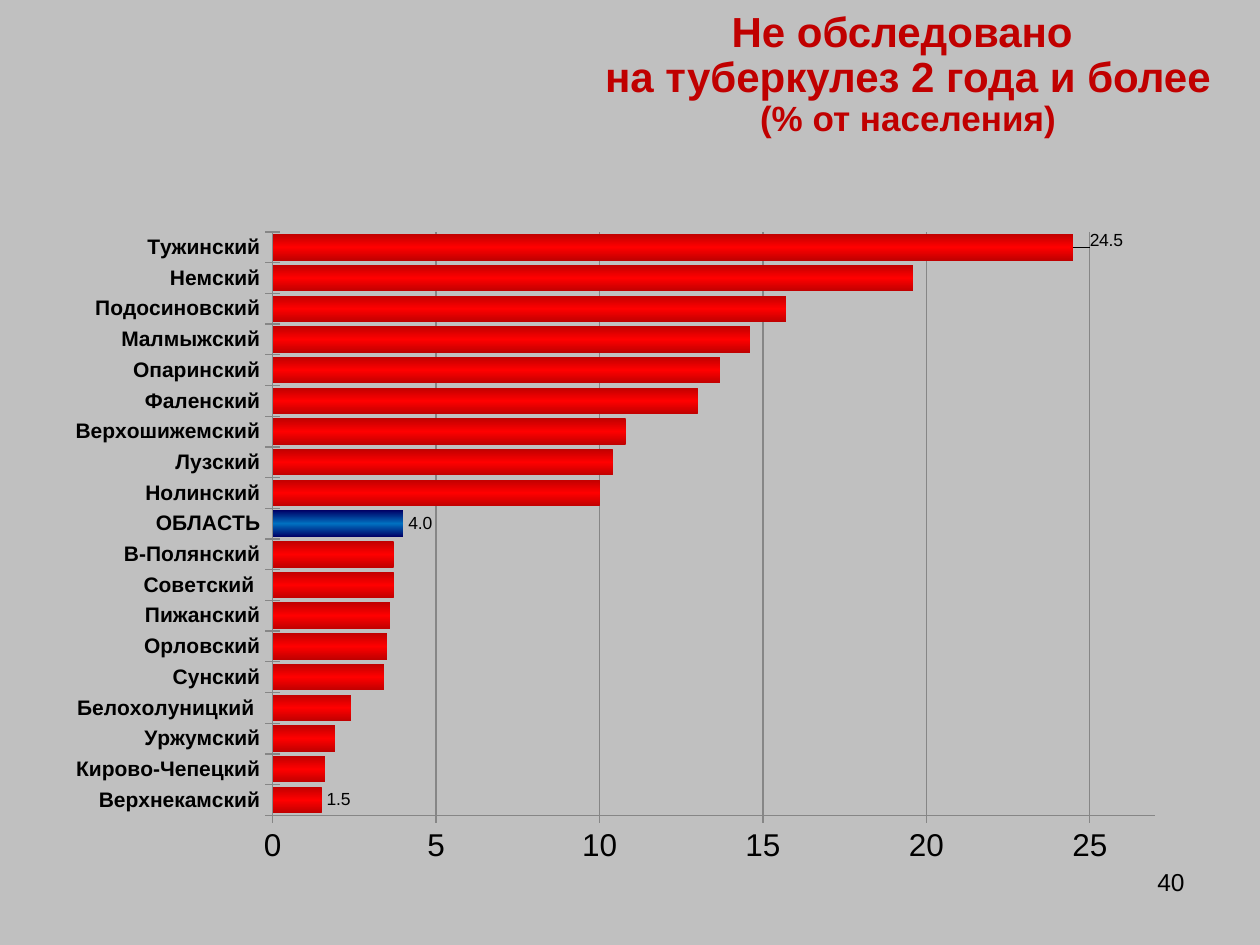
import pptx
import pptx.chart.data
import pptx.dml.color
import pptx.enum.chart
import pptx.enum.text
import pptx.oxml
import pptx.oxml.ns
import pptx.util

PX = 914400 / 126
FONT = "Arial"
RED = ("C00000", "FF0000", "C00000")
BLUE = ("000066", "0070C0", "000066")
GRID = "868686"
REGION = "ОБЛАСТЬ"
DISTRICTS = [
    ("Верхнекамский", 1.5), ("Кирово-Чепецкий", 1.6), ("Уржумский", 1.9),
    ("Белохолуницкий ", 2.4), ("Сунский", 3.4), ("Орловский", 3.5),
    ("Пижанский", 3.6), ("Советский ", 3.7), ("В-Полянский", 3.7),
    (REGION, 4.0), ("Нолинский", 10.0), ("Лузский", 10.4),
    ("Верхошижемский", 10.8), ("Фаленский", 13.0), ("Опаринский", 13.7),
    ("Малмыжский", 14.6), ("Подосиновский", 15.7), ("Немский", 19.6),
    ("Тужинский", 24.5),
]


def px(n):
    return pptx.util.Emu(round(n * PX))


def rgb(value):
    return pptx.dml.color.RGBColor.from_string(value)


def set_font(font, size, color="000000", bold=False):
    font.name = FONT
    font.size = pptx.util.Pt(size)
    font.bold = bold
    font.color.rgb = rgb(color)


def add_text(slide, box, lines, color="000000", bold=False, align="CENTER",
             anchor="TOP", spacing=1.0):
    """Add one paragraph whose (text, size) lines are parted by line breaks."""
    sp = slide.shapes.add_textbox(*map(px, box))
    tf = sp.text_frame
    tf.word_wrap = True
    tf.vertical_anchor = getattr(pptx.enum.text.MSO_ANCHOR, anchor)
    p = tf.paragraphs[0]
    p.alignment = getattr(pptx.enum.text.PP_ALIGN, align)
    p.line_spacing = spacing
    for i, (text, size) in enumerate(lines):
        if i:
            p.add_line_break()
        r = p.add_run()
        r.text = text
        set_font(r.font, size, color, bold)


def fill_gradient(fill, colors):
    fill.gradient()
    fill.gradient_angle = 90
    stops = fill._xPr.find(".//" + pptx.oxml.ns.qn("a:gsLst"))
    stops.clear()
    for i, color in enumerate(colors):
        stops.append(pptx.oxml.parse_xml(
            f'<a:gs {pptx.oxml.ns.nsdecls("a")} pos="{i * 50000}">'
            f'<a:srgbClr val="{color}"/></a:gs>'))


def set_layout(parent, index, **values):
    """Place a chart part by fractions of the chart's size."""
    old = parent.find(pptx.oxml.ns.qn("c:layout"))
    if old is not None:
        parent.remove(old)
    tags = "".join(f'<c:{k} val="{v}"/>' for k, v in values.items())
    parent.insert(index, pptx.oxml.parse_xml(
        f'<c:layout {pptx.oxml.ns.nsdecls("c")}><c:manualLayout>{tags}'
        '</c:manualLayout></c:layout>'))


def style_axis(axis, size, bold=False):
    axis.major_tick_mark = pptx.enum.chart.XL_TICK_MARK.CROSS
    axis.minor_tick_mark = pptx.enum.chart.XL_TICK_MARK.NONE
    axis.format.line.color.rgb = rgb(GRID)
    set_font(axis.tick_labels.font, size, bold=bold)


def label_point(series, index):
    label = series.points[index].data_label
    set_font(label.font, 10)
    label.position = pptx.enum.chart.XL_LABEL_POSITION.OUTSIDE_END


def add_bar_chart(slide, box):
    names, values = zip(*DISTRICTS)
    data = pptx.chart.data.CategoryChartData(number_format="0.0")
    data.categories = names
    data.add_series("Series 1", values)
    chart = slide.shapes.add_chart(
        pptx.enum.chart.XL_CHART_TYPE.BAR_CLUSTERED, *map(px, box), data).chart
    chart.has_legend = False
    chart.has_title = False
    set_font(chart.font, 18)
    set_layout(chart._chartSpace.chart.plotArea, 0, layoutTarget="inner",
               xMode="edge", yMode="edge", x=0.193, y=0.042, w=0.779, h=0.872)

    style_axis(chart.category_axis, 12, bold=True)
    axis = chart.value_axis
    style_axis(axis, 18)
    axis.minimum_scale, axis.maximum_scale, axis.major_unit = 0, 27, 5
    axis.tick_labels.number_format = "0"
    axis.tick_labels.number_format_is_linked = False
    axis.has_major_gridlines = True
    axis.major_gridlines.format.line.color.rgb = rgb(GRID)

    plot = chart.plots[0]
    plot.gap_width = 16
    plot.vary_by_categories = False
    series = plot.series[0]
    series.invert_if_negative = False
    fill_gradient(series.format.fill, RED)
    region, last = names.index(REGION), len(names) - 1
    fill_gradient(series.points[region].format.fill, BLUE)
    series.data_labels.show_value = False
    for index in (0, region, last):
        label_point(series, index)
    top_label = series.points[last].data_label._get_or_add_dLbl()
    set_layout(top_label, 1, x=0.01, y=-0.01)


def main():
    prs = pptx.Presentation()
    prs.slide_width, prs.slide_height = px(1260), px(945)
    slide = prs.slides.add_slide(prs.slide_layouts[6])
    background = slide.background.fill
    background.solid()
    background.fore_color.rgb = rgb("C0C0C0")
    add_bar_chart(slide, (54, 204, 1133, 669))
    add_text(slide, (551, 16, 714, 118),
             [("Не обследовано ", 24), ("на туберкулез 2 года и более", 24),
              ("(% от населения)", 20)],
             color="C00000", bold=True, anchor="MIDDLE", spacing=0.9)
    add_text(slide, (903, 861, 294, 66), [("40", 14)], align="RIGHT")
    prs.save("out.pptx")


if __name__ == "__main__":
    main()
